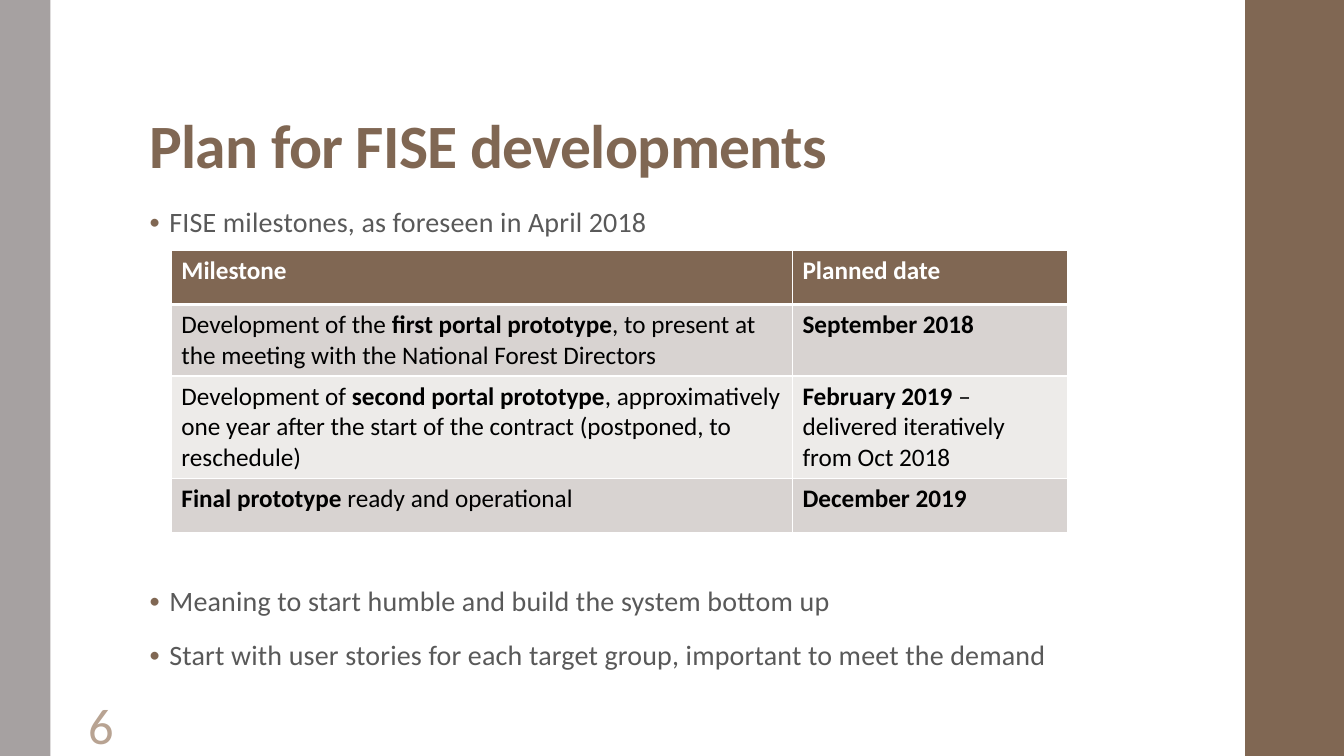
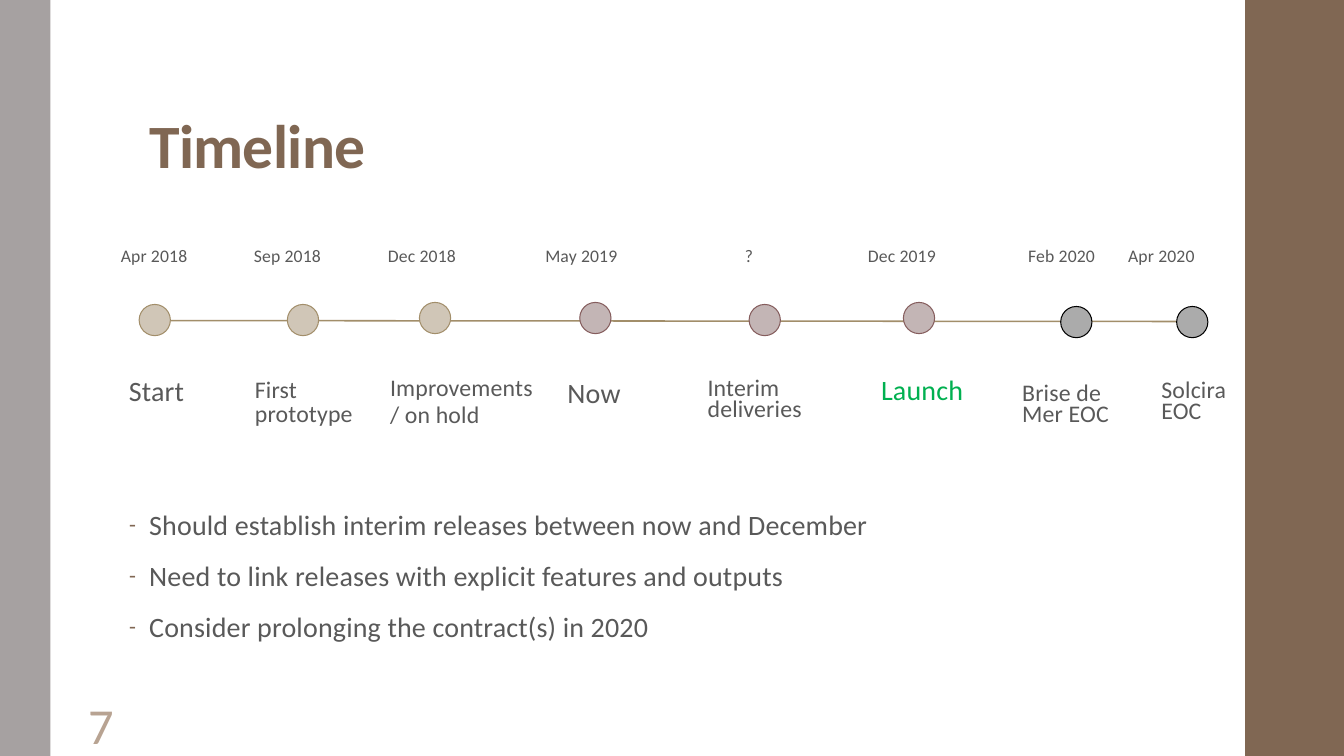
"""Build the plan and timeline slides of the FISE presentation."""
from dataclasses import dataclass
from typing import Any

from lxml import etree
from pptx import Presentation
from pptx import util as u
from pptx.dml.color import RGBColor
from pptx.enum import shapes, text
from pptx.oxml import ns

COLORS = {
    "brown": "806753", "gray": "A6A1A1", "text": "595959", "number": "B8A392",
    "white": "FFFFFF", "black": "000000", "green": "00B050",
    "odd_row": "D8D3D1", "even_row": "EDEBE9",
    "sand": "D0C6B7", "sand_line": "A28E6A",
    "mauve": "C3B5B5", "mauve_line": "855D5D", "silver": "ABABAB",
}
FONT = "Calibri"
FRAME = {"word_wrap": True, "auto_size": text.MSO_AUTO_SIZE.NONE}
TITLE_FRAME = {
    "vertical_anchor": text.MSO_ANCHOR.BOTTOM,
    "margin_top": u.Inches(0.03), "margin_bottom": u.Inches(0.05),
}
NUMBER_FRAME = {"vertical_anchor": text.MSO_ANCHOR.MIDDLE}
CIRCLE = 0.31


@dataclass(frozen=True)
class Style:
    size: float
    color: str = "text"
    bold: bool = False
    tracking: int = 10
    spacing: float = 0.95
    align: Any = text.PP_ALIGN.LEFT


@dataclass(frozen=True)
class Band:
    left: float
    width: float
    color: str


@dataclass(frozen=True)
class Stage:
    left: float
    top: float
    fill: str
    line: str
    date: str
    date_left: float


@dataclass(frozen=True)
class Label:
    words: str
    left: float
    top: float
    width: float
    style: Style


TITLE = Style(44, "brown", True, -50, 0.9)
BODY = Style(20)
NUMBER = Style(36, "number", tracking=0, spacing=1, align=text.PP_ALIGN.CENTER)
DATE = Style(12.6, spacing=0.75)
NOTE = Style(17)
COMPACT_NOTE = Style(17, spacing=0.75)

BANDS = [Band(12.35, 1, "brown"), Band(0, 0.5, "gray")]
MILESTONES = [
    ["**Milestone", "**Planned date"],
    ["Development of the **first portal prototype**, to present at the meeting "
     "with the National Forest Directors", "**September 2018"],
    ["Development of **second portal prototype**, approximatively one year after "
     "the start of the contract (postponed, to reschedule)",
     "**February 2019 **– delivered iteratively from Oct 2018"],
    ["**Final prototype** ready and operational", "**December 2019"],
]
STAGES = [
    Stage(1.38, 3.02, "sand", "sand_line", "Apr 2018", 1.1),
    Stage(2.85, 3.02, "sand", "sand_line", "Sep 2018", 2.42),
    Stage(4.16, 3, "sand", "sand_line", "Dec 2018", 3.75),
    Stage(5.75, 3, "mauve", "mauve_line", "May 2019", 5.31),
    Stage(7.43, 3.02, "mauve", "mauve_line", "?", 7.29),
    Stage(8.96, 3, "mauve", "mauve_line", "Dec 2019", 8.51),
    Stage(10.52, 3.04, "silver", "black", "Feb 2020", 10.1),
    Stage(11.67, 3.04, "silver", "black", "Apr 2020", 11.09),
]
LABELS = [
    Label("Start", 1.18, 3.68, 1.07, BODY),
    Label("First prototype", 2.43, 3.71, 1.26, Style(17, spacing=0.85)),
    Label("Improvements / on hold", 3.77, 3.67, 1.64, NOTE),
    Label("Now", 5.53, 3.7, 0.76, BODY),
    Label("Interim deliveries", 6.92, 3.71, 1.26, COMPACT_NOTE),
    Label("Launch", 8.64, 3.67, 1.26, Style(20, "green")),
    Label("Brise de Mer EOC", 10.04, 3.76, 1.26, COMPACT_NOTE),
    Label("Solcira EOC", 11.42, 3.73, 0.94, COMPACT_NOTE),
]


def rgb(name: str) -> RGBColor:
    return RGBColor.from_string(COLORS[name])


def apply_values(target: Any, values: dict[str, Any]) -> None:
    for name, value in values.items():
        setattr(target, name, value)


def place(shape: Any, left: float, top: float, width: float, height: float) -> None:
    box = {"left": left, "top": top, "width": width, "height": height}
    apply_values(shape, {name: u.Inches(value) for name, value in box.items()})


def add_run(paragraph: Any, words: str, style: Style) -> None:
    run = paragraph.add_run()
    run.text = words
    apply_values(run.font, {"name": FONT, "size": u.Pt(style.size), "bold": style.bold})
    run.font.color.rgb = rgb(style.color)
    if style.tracking:
        run._r.get_or_add_rPr().set("spc", str(style.tracking))


def add_bullet(paragraph: Any, symbol: str) -> None:
    properties = paragraph._p.get_or_add_pPr()
    indent = u.Inches(0.2)
    properties.set("marL", str(indent))
    properties.set("indent", str(-indent))
    color = etree.SubElement(properties, ns.qn("a:buClr"))
    etree.SubElement(color, ns.qn("a:srgbClr"), val=COLORS["brown"])
    etree.SubElement(properties, ns.qn("a:buSzPct"), val="80000")
    etree.SubElement(properties, ns.qn("a:buFont"), typeface=FONT)
    etree.SubElement(properties, ns.qn("a:buChar"), char=symbol)


def write_text(shape: Any, lines: list[str], style: Style, bullet: str = "",
               gaps: tuple[float, ...] = (), frame_values: dict[str, Any] | None = None) -> None:
    frame = shape.text_frame
    apply_values(frame, FRAME | (frame_values or {}))
    for index, words in enumerate(lines):
        paragraph = frame.add_paragraph() if index else frame.paragraphs[0]
        if bullet:
            add_bullet(paragraph, bullet)
        before = gaps[index - 1] if index else 0
        apply_values(paragraph, {
            "alignment": style.align, "line_spacing": style.spacing,
            "space_before": u.Pt(before), "space_after": u.Pt(2 if bullet else 0),
        })
        add_run(paragraph, words, style)


def add_text(slide: Any, words: str, left: float, top: float, width: float, height: float,
             style: Style, frame_values: dict[str, Any] | None = None) -> None:
    shape = slide.shapes.add_textbox(0, 0, 0, 0)
    place(shape, left, top, width, height)
    write_text(shape, [words], style, frame_values=frame_values)


def add_filled(slide: Any, kind: Any, fill: str, line: str | None = None) -> Any:
    shape = slide.shapes.add_shape(kind, 0, 0, 0, 0)
    shape.shadow.inherit = False
    shape.fill.solid()
    shape.fill.fore_color.rgb = rgb(fill)
    if line:
        shape.line.color.rgb = rgb(line)
        shape.line.width = u.Pt(0.75)
    else:
        shape.line.fill.background()
    return shape


def add_slide(presentation: Any, title: str, number: int) -> Any:
    slide = presentation.slides.add_slide(presentation.slide_layouts[1])
    for band in BANDS:
        shape = add_filled(slide, shapes.MSO_SHAPE.RECTANGLE, band.color)
        place(shape, band.left, 0, band.width, 7.5)
    place(slide.shapes.title, 1.38, 0.32, 10.6, 1.53)
    write_text(slide.shapes.title, [title], TITLE, frame_values=TITLE_FRAME)
    add_text(slide, str(number), 0.5, 6.86, 1, 0.65, NUMBER, NUMBER_FRAME)
    return slide


def add_borders(cell: Any, bottom: float) -> None:
    properties = cell._tc.get_or_add_tcPr()
    widths = {"a:lnL": 1, "a:lnR": 1, "a:lnT": 1, "a:lnB": bottom}
    for index, (tag, width) in enumerate(widths.items()):
        border = etree.Element(ns.qn(tag), w=str(u.Pt(width)))
        fill = etree.SubElement(border, ns.qn("a:solidFill"))
        etree.SubElement(fill, ns.qn("a:srgbClr"), val=COLORS["white"])
        properties.insert(index, border)


def add_milestones(slide: Any) -> None:
    frame = slide.shapes.add_table(len(MILESTONES), 2, 0, 0, 0, 0)
    place(frame, 1.7, 2.48, 8.89, 2.16)
    table = frame.table
    for column, width in zip(table.columns, (6.16, 2.73)):
        column.width = u.Inches(width)
    for row_index, row in enumerate(MILESTONES):
        table.rows[row_index].height = u.Inches(0.54)
        header = row_index == 0
        fill = "brown" if header else "odd_row" if row_index % 2 else "even_row"
        for column_index, words in enumerate(row):
            cell = table.cell(row_index, column_index)
            cell.fill.solid()
            cell.fill.fore_color.rgb = rgb(fill)
            add_borders(cell, 3 if header else 1)
            for part_index, part in enumerate(words.split("**")):
                if part:
                    style = Style(18, "white" if header else "black", part_index % 2 == 1, 0)
                    add_run(cell.text_frame.paragraphs[0], part, style)


def build_plan(presentation: Any) -> None:
    slide = add_slide(presentation, "Plan for FISE developments", 6)
    body = slide.placeholders[1]
    place(body, 1.38, 2, 10.6, 4.76)
    write_text(body, [
        "FISE milestones, as foreseen in April 2018",
        "Meaning to start humble and build the system bottom up",
        "Start with user stories for each target group, important to meet the demand",
    ], BODY, "•", (246, 14))
    add_milestones(slide)


def build_timeline(presentation: Any) -> None:
    slide = add_slide(presentation, "Timeline", 7)
    body = slide.placeholders[1]
    place(body, 1.18, 5.04, 10.7, 1.46)
    write_text(body, [
        "Should establish interim releases between now and December",
        "Need to link releases with explicit features and outputs",
        "Consider prolonging the contract(s) in 2020",
    ], Style(20, spacing=0.85), "-", (14, 14))
    axis = slide.shapes.add_connector(
        shapes.MSO_CONNECTOR.STRAIGHT,
        u.Inches(1.38), u.Inches(3.18), u.Inches(11.98), u.Inches(3.19))
    axis.line.color.rgb = rgb("sand_line")
    axis.line.width = u.Pt(1.1)
    etree.SubElement(axis.element.spPr, ns.qn("a:effectLst"))
    for stage in STAGES:
        circle = add_filled(slide, shapes.MSO_SHAPE.OVAL, stage.fill, stage.line)
        place(circle, stage.left, stage.top, CIRCLE, CIRCLE)
        add_text(slide, stage.date, stage.date_left, 2.43, 1, 0.27, DATE)
    for label in LABELS:
        add_text(slide, label.words, label.left, label.top, label.width, 0.6, label.style)


def main() -> None:
    presentation = Presentation()
    apply_values(presentation, {"slide_width": u.Inches(13.33), "slide_height": u.Inches(7.5)})
    build_plan(presentation)
    build_timeline(presentation)
    presentation.save("out.pptx")


if __name__ == "__main__":
    main()
